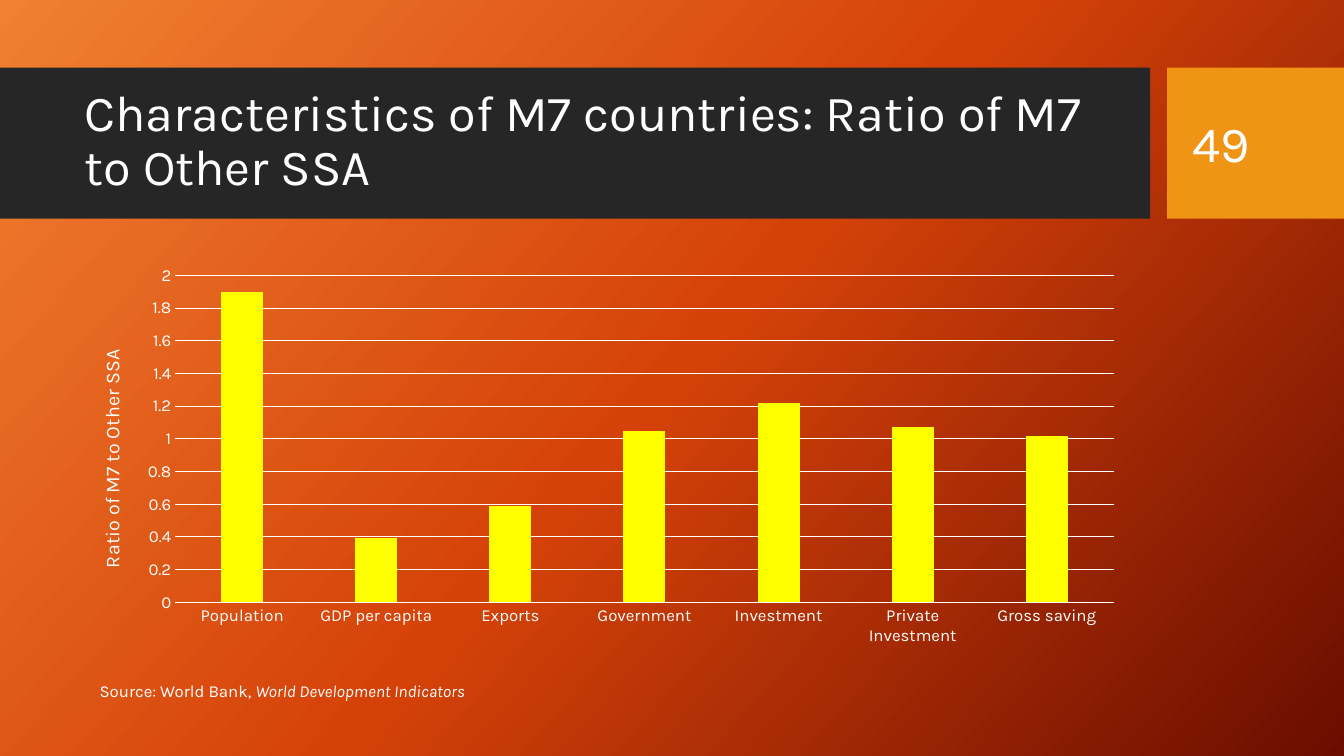
from copy import deepcopy

from lxml import etree
from pptx import Presentation
from pptx import util as u
from pptx.chart.data import CategoryChartData
from pptx.dml.color import RGBColor
from pptx.enum import chart as ch, shapes, text
from pptx.oxml.ns import qn

COLS, ROWS = 40, 30
WHITE, CHARCOAL, AMBER, YELLOW = "FFFFFF", "262626", "F09415", "FFFF00"
RATIOS = {
    "Population": 1.9,
    "GDP per capita": 0.39,
    "Exports": 0.59,
    "Government": 1.05,
    "Investment": 1.22,
    "Private Investment": 1.07,
    "Gross saving": 1.02,
}


def rgb(value):
    return RGBColor.from_string(value)


class Deck:
    font = "Karla"

    def __init__(self):
        self.prs = Presentation()
        self.prs.slide_width, self.prs.slide_height = u.Inches(13.33), u.Inches(7.5)
        self.s = self.prs.slides.add_slide(self.prs.slide_layouts[5])

    def box(self, col, row, cols, rows):
        """Grid position and span as left, top, width, height."""
        dx, dy = self.prs.slide_width / COLS, self.prs.slide_height / ROWS
        return round(col * dx), round(row * dy), round(cols * dx), round(rows * dy)

    def style(self, font, size):
        font.name, font.size, font.bold = self.font, u.Pt(size), False
        font.color.rgb = rgb(WHITE)

    def background(self, colors, angle):
        fill = self.s.background.fill
        fill.gradient()
        fill.gradient_angle = 360 - angle
        stops = self.s.element.find(".//" + qn("a:gsLst"))
        stops.append(deepcopy(stops[-1]))
        for i, (stop, color) in enumerate(zip(fill.gradient_stops, colors)):
            stop.position = i / (len(colors) - 1)
            stop.color.rgb = rgb(color)

    def band(self, grid, color):
        sp = self.s.shapes.add_shape(shapes.MSO_SHAPE.RECTANGLE, *self.box(*grid))
        sp.shadow.inherit = False
        sp.fill.solid()
        sp.fill.fore_color.rgb = rgb(color)
        sp.line.fill.background()

    def fill_text(self, sp, size, *runs, anchor=text.MSO_ANCHOR.MIDDLE):
        tf = sp.text_frame
        tf.word_wrap, tf.auto_size = True, text.MSO_AUTO_SIZE.NONE
        tf.vertical_anchor = anchor
        p = tf.paragraphs[0]
        p.alignment = text.PP_ALIGN.LEFT
        self.style(p.font, size)
        for words in runs:
            p.add_run().text = words
        return p

    def title(self, grid, words):
        sp = self.s.shapes.title
        sp.left, sp.top, sp.width, sp.height = self.box(*grid)
        self.fill_text(sp, 36, words).line_spacing = 0.9
        # Keep the title above the bands
        sp.element.getparent().append(sp.element)

    def text(self, grid, size, *runs, **options):
        sp = self.s.shapes.add_textbox(*self.box(*grid))
        return self.fill_text(sp, size, *runs, **options)

    def place(self, parent, before, **shares):
        """Fix a chart part at shares of the chart's size."""
        for old in parent.findall(qn("c:layout")):
            parent.remove(old)
        layout = etree.Element(qn("c:layout"))
        manual = etree.SubElement(layout, qn("c:manualLayout"))
        for tag, value in shares.items():
            etree.SubElement(manual, qn("c:" + tag)).set("val", str(value))
        parent.find(qn(before)).addprevious(layout)

    def columns(self, grid, values, axis_title):
        data = CategoryChartData()
        data.categories = list(values)
        data.add_series("Series 1", list(values.values()))
        chart = self.s.shapes.add_chart(
            ch.XL_CHART_TYPE.COLUMN_CLUSTERED, *self.box(*grid), data).chart
        self.style(chart.font, 10)
        chart.has_legend = chart.has_title = False
        plot = chart.plots[0]
        plot.gap_width, plot.overlap, plot.vary_by_categories = 219, -27, False
        fill = plot.series[0].format.fill
        fill.solid()
        fill.fore_color.rgb = rgb(YELLOW)

        # Axes and gridlines
        cat, val = chart.category_axis, chart.value_axis
        for axis in (cat, val):
            axis.major_tick_mark = axis.minor_tick_mark = ch.XL_TICK_MARK.NONE
            self.style(axis.tick_labels.font, 12)
        val.minimum_scale, val.maximum_scale, val.major_unit = 0, 2, 0.2
        val.tick_labels.number_format = "General"
        val.tick_labels.number_format_is_linked = False
        val.format.line.fill.background()
        val.has_major_gridlines = True
        for line in (cat.format.line, val.major_gridlines.format.line):
            line.color.rgb = rgb(WHITE)
            line.width = u.Pt(0.75)

        # Axis title, turned to read upwards
        tf = val.axis_title.text_frame
        tf.text = axis_title
        self.style(tf.paragraphs[0].font, 14)
        title = chart.element.find(".//" + qn("c:valAx")).find(qn("c:title"))
        body = title.find(".//" + qn("a:bodyPr"))
        body.set("rot", "-5400000")
        body.set("vert", "horz")

        # Fixed places within the chart
        self.place(title, "c:overlay", xMode="edge", yMode="edge", x=0.02, y=0.22)
        self.place(chart.element.find(".//" + qn("c:plotArea")), "c:barChart",
                   layoutTarget="inner", xMode="edge", yMode="edge",
                   x=0.095, y=0.044, w=0.886, h=0.823)


def main():
    d = Deck()
    d.background(["F18031", "D54209", "6A0D00"], 42)

    # Header bands, title and slide number
    d.band((0, 2.68, 34.23, 6), CHARCOAL)
    d.band((34.74, 2.68, 5.26, 6), AMBER)
    d.title((2.22, 3.28, 31.53, 4.72),
            "Characteristics of M7 countries: Ratio of M7 to Other SSA")
    d.text((35.19, 3.28, 3.78, 4.76), 36, "49")

    # Chart
    d.columns((2.22, 10.24, 31.53, 15.76), RATIOS, "Ratio of M7 to Other SSA")

    # Source line
    p = d.text((2.67, 26.8, 30.3, 1.2), 12, "Source: World Bank, ",
               "World Development Indicators", anchor=text.MSO_ANCHOR.TOP)
    p.runs[1].font.italic = True

    d.prs.save("out.pptx")


if __name__ == "__main__":
    main()
